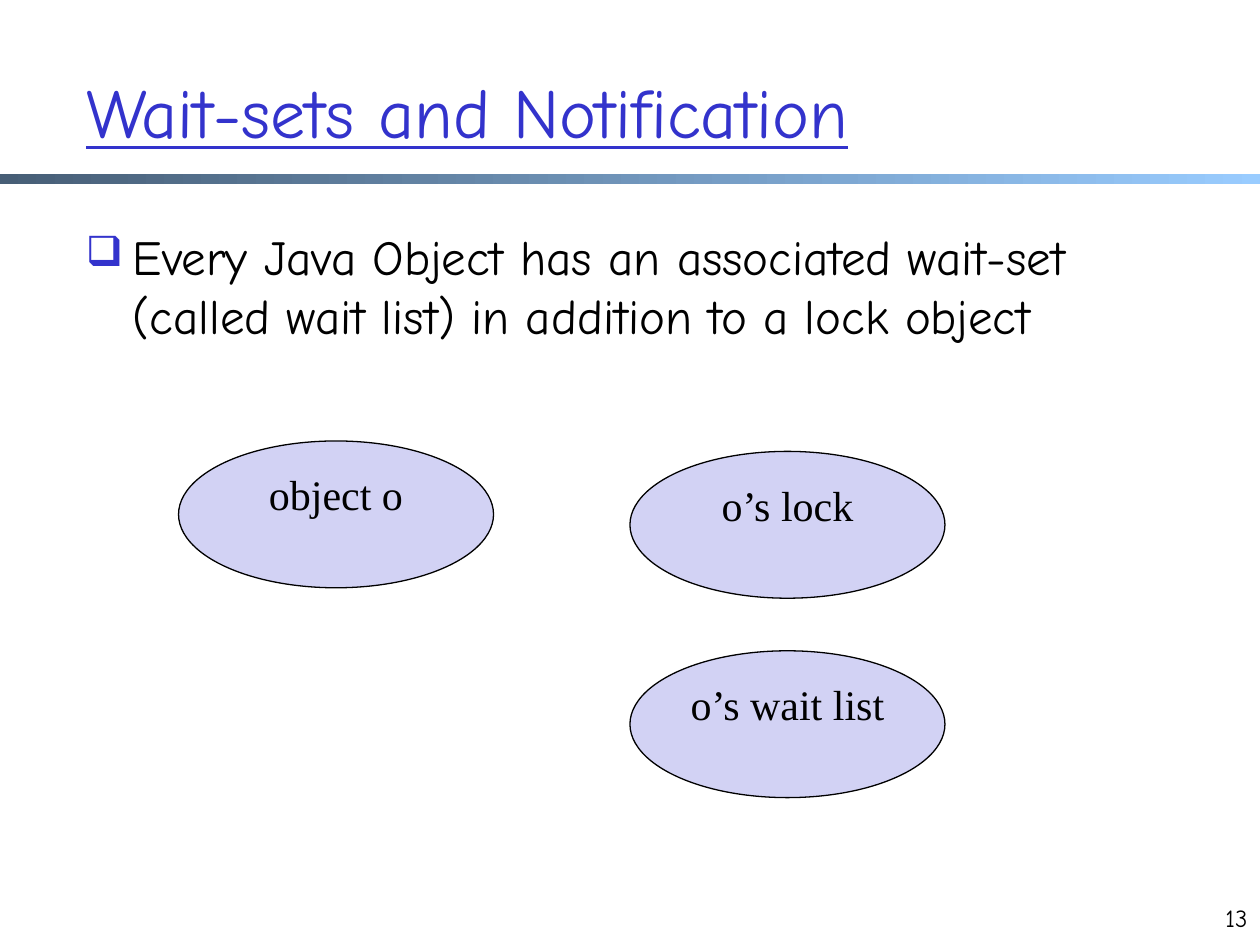
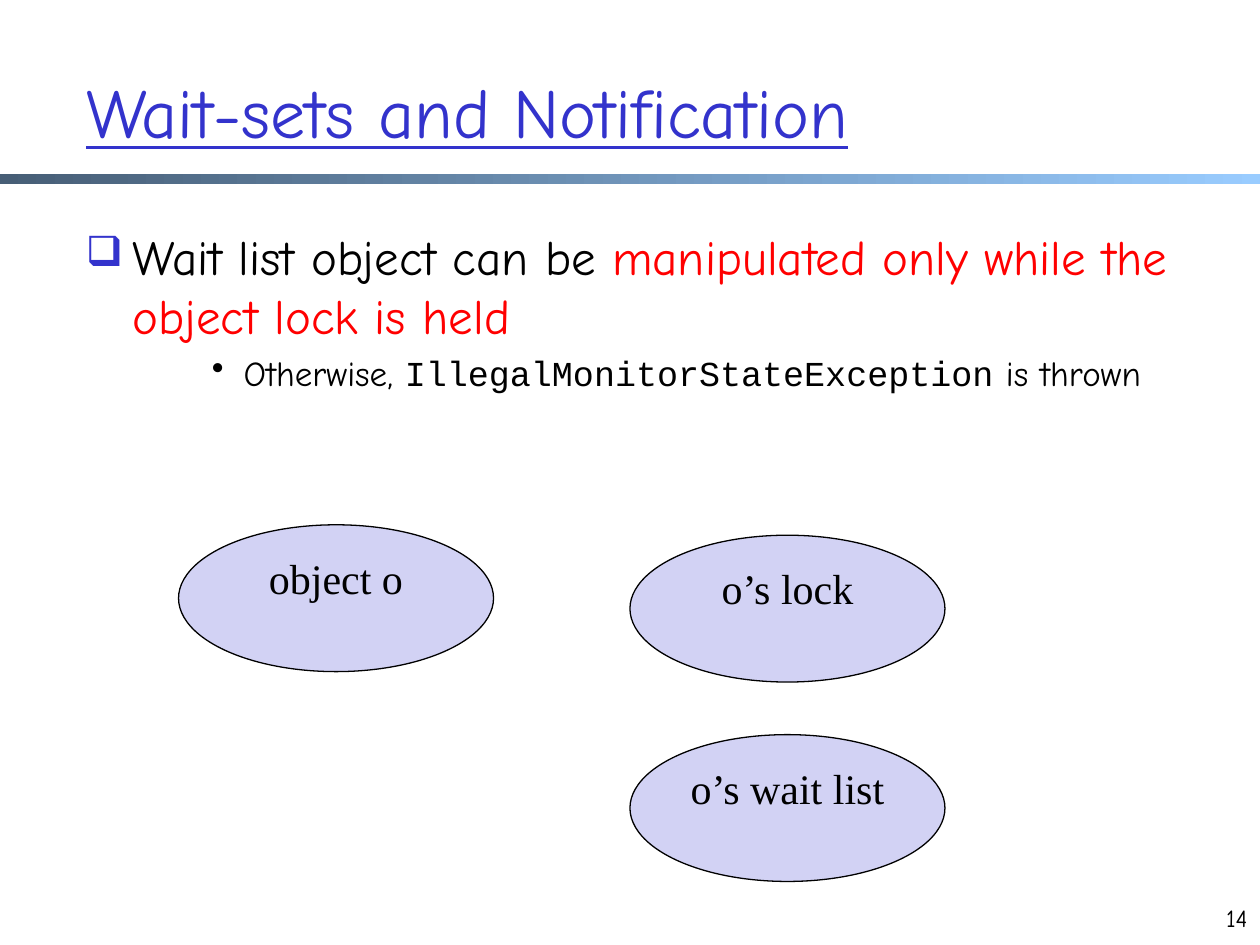
from lxml.etree import SubElement
from pptx import Presentation
from pptx.dml.color import RGBColor
from pptx.enum.shapes import MSO_SHAPE as SHAPE
from pptx.enum.text import MSO_ANCHOR as ANCHOR, MSO_AUTO_SIZE as FIT, PP_ALIGN as ALIGN
from pptx.oxml.ns import qn
from pptx.util import Cm, Pt

BLUE, BLACK, RED = "3333CC", "000000", "FF0000"
LILAC, DARK, SKY = "D2D2F4", "475E76", "99CCFF"
HAND, CODE, SERIF = "Comic Neue", "Courier New", "Times New Roman"
WIDE, HIGH = 25.4, 19.05
LEFT = 1.48

# label, left and top; tops are for the first slide
OVALS = [("object o", 3.6, 8.89), ("o’s lock", 12.7, 9.1), ("o’s wait list", 12.7, 13.12)]


def rgb(code):
    return RGBColor.from_string(code)


def add_run(para, text, size, color=BLACK, face=HAND):
    run = para.add_run()
    run.text = text
    run.font.size = Pt(size)
    run.font.name = face
    run.font.color.rgb = rgb(color)
    return run


def add_title(slide, text):
    title = slide.shapes.title
    title.left, title.top = Cm(LEFT), Cm(0.64)
    title.width, title.height = Cm(21.59), Cm(3.18)
    frame = title.text_frame
    frame.auto_size = FIT.NONE
    frame.vertical_anchor = ANCHOR.MIDDLE
    para = frame.paragraphs[0]
    para.alignment = ALIGN.LEFT
    add_run(para, text, 40, BLUE).font.underline = True


def add_band(slide):
    band = slide.shapes.add_shape(SHAPE.RECTANGLE, 0, Cm(3.51), Cm(WIDE), Cm(0.2))
    band.shadow.inherit = False
    band.line.fill.background()
    band.fill.gradient()
    band.fill.gradient_angle = 0
    for stop, color in zip(band.fill.gradient_stops, (DARK, SKY)):
        stop.color.rgb = rgb(color)


def add_box(slide, left, top, width, height):
    frame = slide.shapes.add_textbox(Cm(left), Cm(top), Cm(width), Cm(height)).text_frame
    frame.word_wrap = True
    return frame


def set_bullet(para, mark, indent, hang, color, scale):
    """Give the paragraph a bullet; scale is its size in percent of the text."""
    props = para._p.get_or_add_pPr()
    props.set("marL", str(Cm(indent)))
    props.set("indent", str(-Cm(hang)))
    tint = SubElement(props, qn("a:buClr"))
    SubElement(tint, qn("a:srgbClr"), val=color)
    SubElement(props, qn("a:buSzPct"), val=str(scale * 1000))
    SubElement(props, qn("a:buChar"), char=mark)


def add_point(para, size, runs, bullet):
    para.space_before = Pt(size * 0.2)
    set_bullet(para, *bullet)
    for text, color, face in runs:
        add_run(para, text, size, color, face)


def add_body(slide, width, main_runs, sub_runs=()):
    frame = add_box(slide, LEFT, 4.45, width, 12.9)
    add_point(frame.paragraphs[0], 28, main_runs, ("❑", 0.95, 0.95, BLUE, 85))
    if sub_runs:
        para = frame.add_paragraph()
        para.level = 2
        add_point(para, 20, sub_runs, ("•", 3.18, 0.64, BLACK, 100))


def add_number(slide, number):
    para = add_box(slide, WIDE - 1.27, 18.08, 1.27, 1.27 - 0.3).paragraphs[0]
    para.alignment = ALIGN.RIGHT
    add_run(para, str(number), 14)


def add_oval(slide, label, left, top):
    oval = slide.shapes.add_shape(SHAPE.OVAL, Cm(left), Cm(top), Cm(6.35), Cm(2.96))
    oval.shadow.inherit = False
    oval.fill.solid()
    oval.fill.fore_color.rgb = rgb(LILAC)
    oval.line.color.rgb = rgb(BLACK)
    oval.line.width = Pt(0.75)
    frame = oval.text_frame
    frame.word_wrap = False
    frame.vertical_anchor = ANCHOR.TOP
    para = frame.paragraphs[0]
    para.alignment = ALIGN.CENTER
    add_run(para, label, 24, BLACK, SERIF)


def add_page(deck, number, drop, width, main_runs, sub_runs=()):
    """Add one slide; drop is how far its ovals move down."""
    slide = deck.slides.add_slide(deck.slide_layouts[5])
    add_band(slide)
    add_title(slide, "Wait-sets and Notification")
    add_body(slide, width, main_runs, sub_runs)
    add_number(slide, number)
    for label, left, top in OVALS:
        add_oval(slide, label, left, top + drop)


def main():
    deck = Presentation()
    deck.slide_width, deck.slide_height = Cm(WIDE), Cm(HIGH)
    add_page(deck, 13, 0, 21.59, [
        ("Every Java Object has an associated wait-set "
         "(called wait list) in addition to a lock object", BLACK, HAND),
    ])
    add_page(deck, 14, 1.69, 22.86, [
        ("Wait list object can be ", BLACK, HAND),
        ("manipulated only while the object lock is held", RED, HAND),
    ], [
        ("Otherwise, ", BLACK, HAND),
        ("IllegalMonitorStateException", BLACK, CODE),
        (" is thrown", BLACK, HAND),
    ])
    deck.save("out.pptx")


if __name__ == "__main__":
    main()
